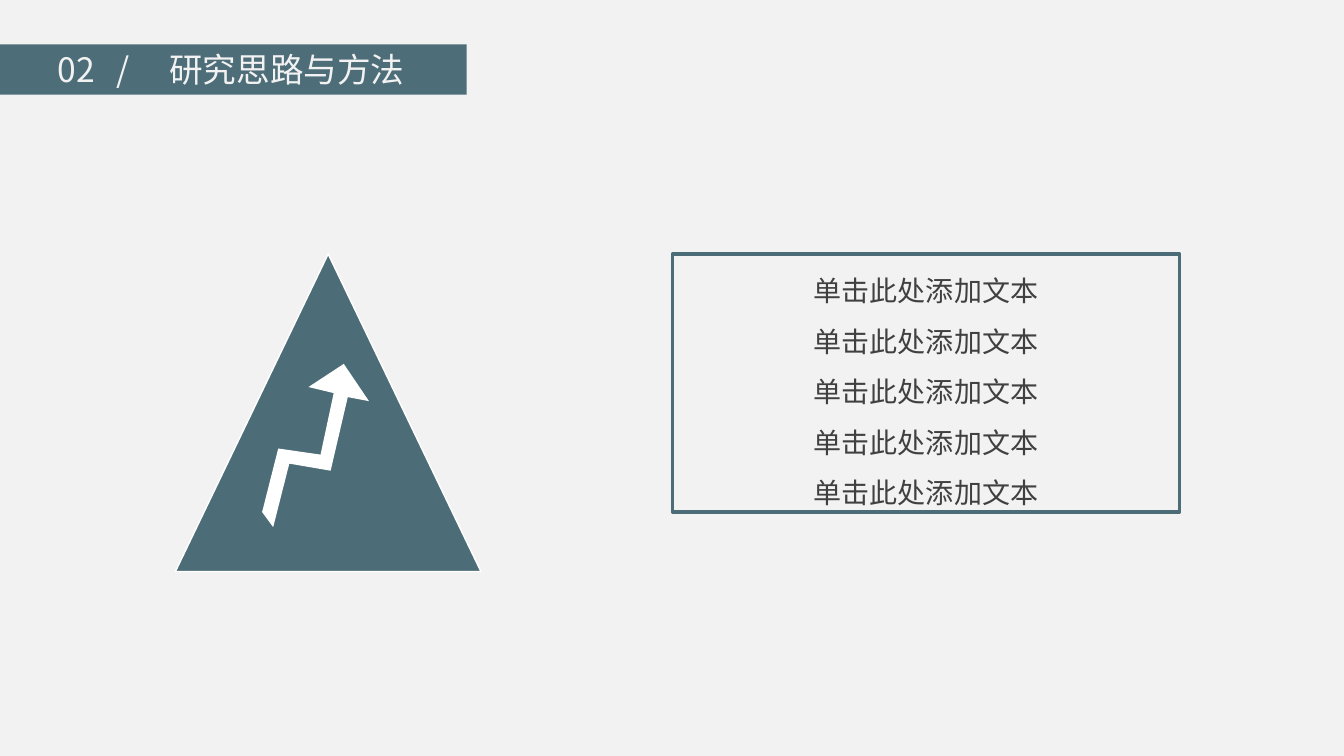
from dataclasses import dataclass
from typing import Optional

from lxml.etree import SubElement
from pptx import Presentation
from pptx.dml.color import RGBColor
from pptx.enum.shapes import MSO_SHAPE
from pptx.enum.text import MSO_ANCHOR, MSO_AUTO_SIZE, PP_ALIGN
from pptx.oxml.ns import qn
from pptx.util import Inches, Pt

COLORS = {
    "background": "F2F2F2",
    "teal": "4C6D78",
    "band": "4D6D78",
    "white": "FFFFFF",
    "text": "404040",
}
FONT_NAME = "Noto Sans CJK SC"
# Corners in hundredths of an inch, since the freeform builder rounds to whole units.
ARROW_POINTS = [
    (341, 361), (306, 384), (331, 390), (318, 451),
    (276, 445), (260, 508), (271, 523), (287, 460),
    (328, 467), (345, 394), (366, 398),
]
TITLE_TABS = (0.59, 1.11)


@dataclass(frozen=True)
class Block:
    preset: MSO_SHAPE
    left: float
    top: float
    width: float
    height: float
    fill: Optional[str] = None
    line: Optional[str] = None
    line_width: float = 1


TRIANGLE = Block(MSO_SHAPE.ISOSCELES_TRIANGLE, 1.74, 2.52, 3.03, 3.15, "teal", "white")
TEXT_FRAME = Block(MSO_SHAPE.RECTANGLE, 6.67, 2.52, 5.03, 2.56, line="teal", line_width=2.25)
TITLE_BAND = Block(MSO_SHAPE.RECTANGLE, -0.07, 0.44, 4.7, 0.5, "band")


def color(name: str) -> RGBColor:
    return RGBColor.from_string(COLORS[name])


def paint(shape, fill: Optional[str], line: Optional[str], line_width: float = 1) -> None:
    shape.shadow.inherit = False
    if fill:
        shape.fill.solid()
        shape.fill.fore_color.rgb = color(fill)
    else:
        shape.fill.background()
    if line:
        shape.line.color.rgb = color(line)
        shape.line.width = Pt(line_width)
    else:
        shape.line.fill.background()


def add_block(shapes, block: Block):
    shape = shapes.add_shape(
        block.preset, Inches(block.left), Inches(block.top),
        Inches(block.width), Inches(block.height),
    )
    paint(shape, block.fill, block.line, block.line_width)
    return shape


def add_arrow(shapes) -> None:
    builder = shapes.build_freeform(*ARROW_POINTS[0], scale=Inches(0.01))
    builder.add_line_segments(ARROW_POINTS[1:], close=True)
    paint(builder.convert_to_shape(), "white", None)


def write_lines(shape, lines: list[str], size: float, font_color: str,
                alignment: PP_ALIGN, spacing: float = 1.0) -> None:
    frame = shape.text_frame
    frame.word_wrap = True
    frame.auto_size = MSO_AUTO_SIZE.SHAPE_TO_FIT_TEXT
    frame.vertical_anchor = MSO_ANCHOR.MIDDLE
    frame.text = "\n".join(lines)
    for paragraph in frame.paragraphs:
        paragraph.alignment = alignment
        paragraph.line_spacing = spacing
        font = paragraph.font
        font.size = Pt(size)
        font.name = FONT_NAME
        font.color.rgb = color(font_color)
        SubElement(font._element, qn("a:ea"), typeface=FONT_NAME)


def set_tab_stops(paragraph, positions: tuple[float, ...]) -> None:
    properties = paragraph._p.get_or_add_pPr()
    tab_list = SubElement(properties, qn("a:tabLst"))
    for position in positions:
        SubElement(tab_list, qn("a:tab"), pos=str(Inches(position)), algn="l")
    properties.find(qn("a:defRPr")).addprevious(tab_list)


def main() -> None:
    presentation = Presentation()
    presentation.slide_width = Inches(13.33)
    presentation.slide_height = Inches(7.5)
    slide = presentation.slides.add_slide(presentation.slide_layouts[6])
    slide.background.fill.solid()
    slide.background.fill.fore_color.rgb = color("background")

    sign = slide.shapes.add_group_shape()
    add_block(sign.shapes, TRIANGLE)
    add_arrow(sign.shapes)

    text_box = add_block(slide.shapes, TEXT_FRAME)
    write_lines(text_box, ["单击此处添加文本"] * 5, 20, "text", PP_ALIGN.CENTER, 1.5)

    title = add_block(slide.shapes, TITLE_BAND)
    write_lines(title, ["02\t/\t研究思路与方法"], 24, "background", PP_ALIGN.LEFT)
    title.text_frame.margin_left = Inches(0.64)
    set_tab_stops(title.text_frame.paragraphs[0], TITLE_TABS)

    presentation.save("out.pptx")


if __name__ == "__main__":
    main()
